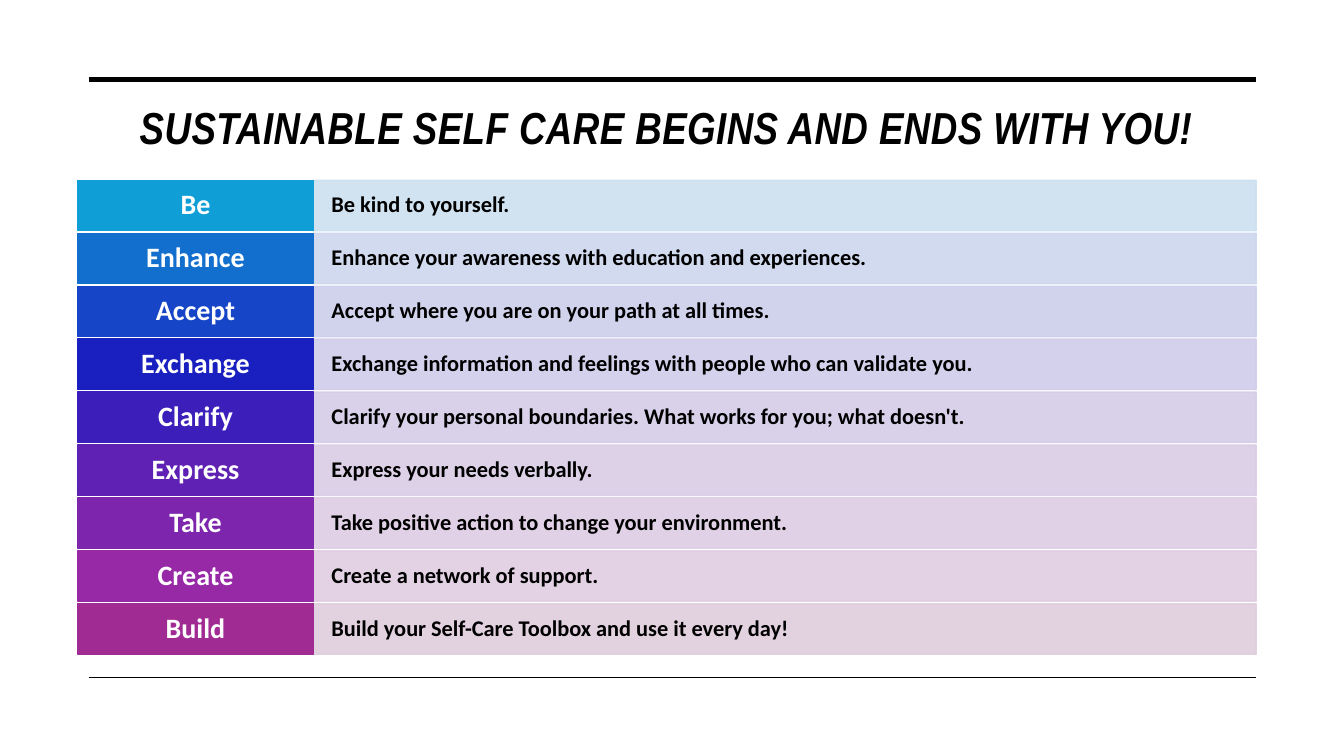
"""Build the self-care slide: a title between two rules and nine verb rows."""
from lxml.etree import SubElement
from pptx import Presentation
from pptx.dml.color import RGBColor
from pptx.enum.shapes import MSO_CONNECTOR as Connector, MSO_SHAPE as Preset
from pptx.enum.text import MSO_ANCHOR as Anchor, PP_ALIGN as Align
from pptx.oxml.ns import qn
from pptx.util import Inches, Pt

TITLE = "SUSTAINABLE SELF CARE BEGINS AND ENDS WITH YOU!"
BLACK = RGBColor(0x00, 0x00, 0x00)
WHITE = RGBColor(0xFF, 0xFF, 0xFF)
ROWS = [
    ("Be", "Be kind to yourself.",
     RGBColor(0x0F, 0x9E, 0xD5), RGBColor(0xCC, 0xDF, 0xEF)),
    ("Enhance", "Enhance your awareness with education and experiences.",
     RGBColor(0x13, 0x6F, 0xCE), RGBColor(0xCC, 0xD7, 0xEE)),
    ("Accept", "Accept where you are on your path at all times.",
     RGBColor(0x17, 0x45, 0xC7), RGBColor(0xCC, 0xCF, 0xEC)),
    ("Exchange", "Exchange information and feelings with people who can validate you.",
     RGBColor(0x1A, 0x20, 0xC0), RGBColor(0xD0, 0xCC, 0xEA)),
    ("Clarify", "Clarify your personal boundaries. What works for you; what doesn't.",
     RGBColor(0x3C, 0x1E, 0xBA), RGBColor(0xD5, 0xCC, 0xE8)),
    ("Express", "Express your needs verbally.",
     RGBColor(0x5F, 0x21, 0xB3), RGBColor(0xDA, 0xCC, 0xE6)),
    ("Take", "Take positive action to change your environment.",
     RGBColor(0x7D, 0x25, 0xAD), RGBColor(0xDE, 0xCD, 0xE4)),
    ("Create", "Create a network of support.",
     RGBColor(0x97, 0x28, 0xA6), RGBColor(0xE1, 0xCD, 0xE2)),
    ("Build", "Build your Self-Care Toolbox and use it every day!",
     RGBColor(0xA0, 0x2B, 0x93), RGBColor(0xDF, 0xCD, 0xDC)),
]

SLIDE_WIDTH, SLIDE_HEIGHT = 13.33, 7.5
LEFT, WIDTH = 0.77, 11.69
VERB_WIDTH = WIDTH / 5
FIRST_TOP, LAST_TOP, ROW_HEIGHT = 1.79, 5.99, 0.5
ROW_PITCH = (LAST_TOP - FIRST_TOP) / (len(ROWS) - 1)
RULE_LEFT, RULE_RIGHT = 0.88, LEFT + WIDTH
RULES = [(0.79, 3.5), (6.72, 1)]


def write(shape, text, font_name, size, color, align, inset_x, inset_y):
    frame = shape.text_frame
    frame.word_wrap = True
    frame.vertical_anchor = Anchor.MIDDLE
    frame.margin_left = frame.margin_right = Inches(inset_x)
    frame.margin_top = frame.margin_bottom = Inches(inset_y)
    paragraph = frame.paragraphs[0]
    paragraph.text = text
    paragraph.alignment = align
    paragraph.line_spacing = 0.9
    font = paragraph.font
    font.name, font.size, font.bold = font_name, Pt(size), True
    font.color.rgb = color
    return paragraph


def add_rule(slide, top, weight):
    rule = slide.shapes.add_connector(
        Connector.STRAIGHT, Inches(RULE_LEFT), Inches(top), Inches(RULE_RIGHT), Inches(top))
    rule.line.color.rgb = BLACK
    rule.line.width = Pt(weight)
    SubElement(rule._element.spPr, qn("a:effectLst"))


def add_title(slide):
    box = slide.shapes.add_textbox(Inches(LEFT), Inches(0.99), Inches(WIDTH), Inches(0.59))
    paragraph = write(box, TITLE, "Arial Narrow", 32, BLACK, Align.CENTER, 0.1, 0.05)
    paragraph.font.italic = True
    paragraph.runs[0].font._element.set("spc", "30")


def add_bar(slide, left, top, width, color, opacity):
    bar = slide.shapes.add_shape(
        Preset.RECTANGLE, Inches(left), Inches(top), Inches(width), Inches(ROW_HEIGHT))
    bar.shadow.inherit = False
    bar.fill.solid()
    bar.fill.fore_color.rgb = color
    bar.line.color.rgb = color
    bar.line.width = Pt(1)
    if opacity < 100:
        for swatch in bar._element.spPr.iter(qn("a:srgbClr")):
            SubElement(swatch, qn("a:alpha"), val=str(opacity * 1000))
    return bar


def main():
    presentation = Presentation()
    presentation.slide_width = Inches(SLIDE_WIDTH)
    presentation.slide_height = Inches(SLIDE_HEIGHT)
    slide = presentation.slides.add_slide(presentation.slide_layouts[6])
    for top, weight in RULES:
        add_rule(slide, top, weight)
    add_title(slide)
    for index, (verb, advice, strong, pale) in enumerate(ROWS):
        top = FIRST_TOP + index * ROW_PITCH
        advice_bar = add_bar(slide, LEFT + VERB_WIDTH, top, WIDTH - VERB_WIDTH, pale, 90)
        write(advice_bar, advice, "Calibri", 16, BLACK, Align.LEFT, 0.18, 0.13)
        verb_bar = add_bar(slide, LEFT, top, VERB_WIDTH, strong, 100)
        write(verb_bar, verb, "Calibri", 20, WHITE, Align.CENTER, 0.12, 0.05)
    presentation.save("out.pptx")


if __name__ == "__main__":
    main()
